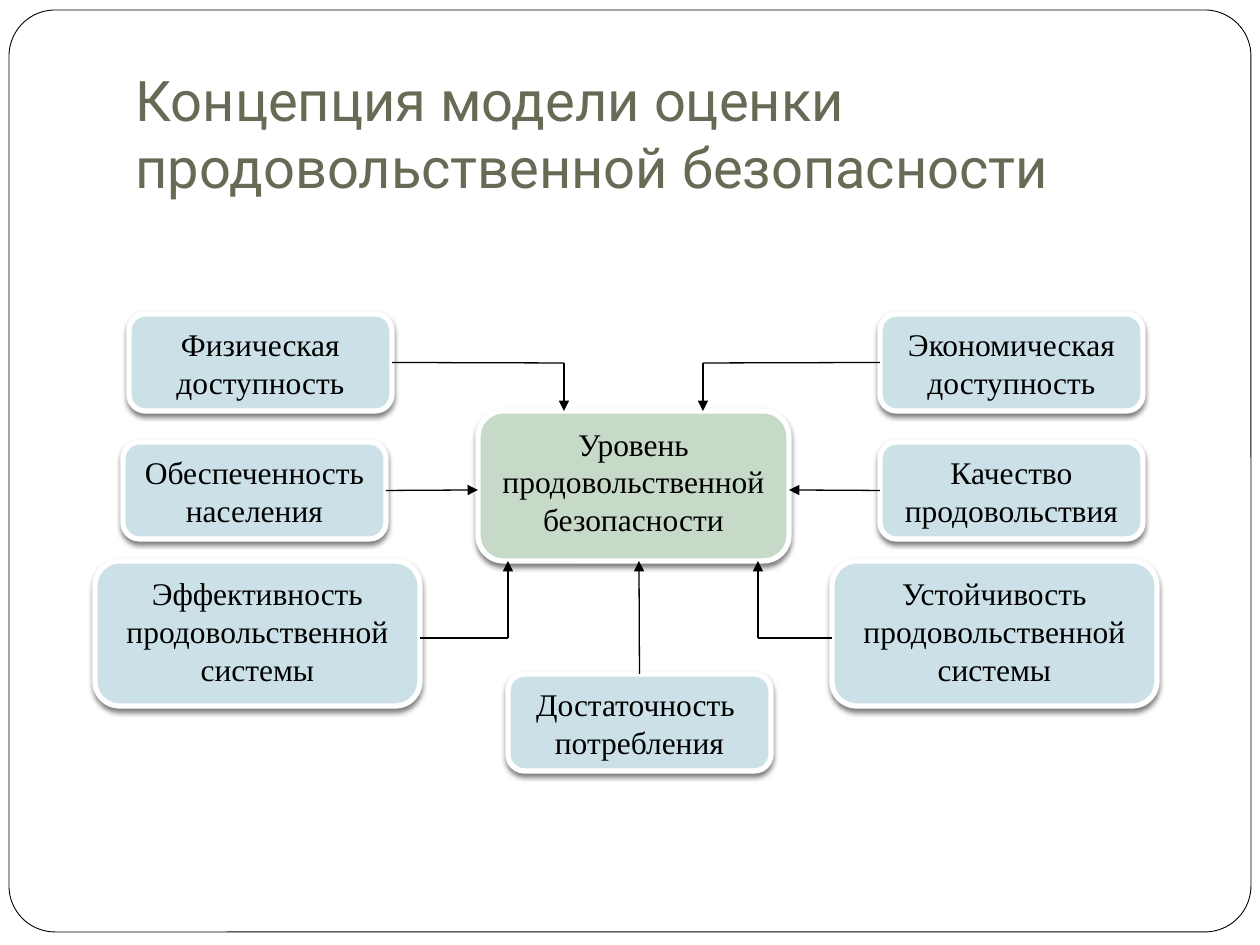
from dataclasses import dataclass
from typing import Optional

from lxml.etree import SubElement
from pptx import Presentation
from pptx.dml.color import RGBColor
from pptx.enum.shapes import MSO_CONNECTOR, MSO_SHAPE
from pptx.enum.text import MSO_ANCHOR, PP_ALIGN
from pptx.oxml.ns import qn
from pptx.util import Emu, Pt

EMU_PER_PX = 914400 / 126
TOP, LEFT, BOTTOM, RIGHT = range(4)
BLACK = "000000"
WHITE = "FFFFFF"
OLIVE = "676A55"
GREEN = "C7DAC8"
BLUE = "CBE1E7"
SMALL = (263, 97)
LARGE = (325, 145)


@dataclass(frozen=True)
class Box:
    text: str
    left: int
    top: int
    size: tuple[int, int]
    fill: str = BLUE


@dataclass(frozen=True)
class Joint:
    box: str
    side: int


@dataclass(frozen=True)
class Link:
    start: tuple[int, int]
    end: tuple[int, int]
    has_arrow: bool = False
    start_joint: Optional[Joint] = None
    end_joint: Optional[Joint] = None


BOXES = {
    "level": Box("Уровень продовольственной безопасности", 478, 411, (311, 150), GREEN),
    "efficiency": Box("Эффективность продовольственной системы", 95, 561, LARGE),
    "stability": Box("Устойчивость продовольственной системы", 832, 561, LARGE),
    "physical": Box("Физическая доступность", 129, 314, SMALL),
    "economic": Box("Экономическая доступность", 880, 314, SMALL),
    "supply": Box("Обеспеченность населения", 123, 442, SMALL),
    "quality": Box("Качество продовольствия", 880, 442, SMALL),
    "sufficiency": Box("Достаточность \vпотребления", 508, 674, SMALL),
}

LINKS = [
    Link((392, 363), (564, 363), start_joint=Joint("physical", RIGHT)),
    Link((564, 363), (564, 411), has_arrow=True),
    Link((703, 363), (880, 363), end_joint=Joint("economic", LEFT)),
    Link((703, 363), (703, 411), has_arrow=True),
    Link((386, 490), (478, 490), True, Joint("supply", RIGHT)),
    Link((880, 490), (789, 490), True, Joint("quality", LEFT)),
    Link((639, 674), (639, 561), True, Joint("sufficiency", TOP)),
    Link((420, 638), (508, 638)),
    Link((508, 638), (508, 561), has_arrow=True),
    Link((758, 638), (832, 638)),
    Link((758, 638), (758, 561), has_arrow=True),
]


def px(length: float) -> Emu:
    return Emu(round(length * EMU_PER_PX))


def color(value: str) -> RGBColor:
    return RGBColor.from_string(value)


def write_text(shape, text: str, *, size: int, font: str, fill: str, align, anchor) -> None:
    frame = shape.text_frame
    frame.word_wrap = True
    frame.vertical_anchor = anchor
    frame.text = text
    paragraph = frame.paragraphs[0]
    paragraph.alignment = align
    for run in paragraph.runs:
        run.font.size = Pt(size)
        run.font.name = font
        run.font.color.rgb = color(fill)


def add_round_rectangle(slide, left: int, top: int, width: int, height: int, *,
                        fill: str, line: str, line_width: float, rounding: float):
    shape = slide.shapes.add_shape(
        MSO_SHAPE.ROUNDED_RECTANGLE, px(left), px(top), px(width), px(height))
    shape.adjustments[0] = rounding
    shape.fill.solid()
    shape.fill.fore_color.rgb = color(fill)
    shape.line.color.rgb = color(line)
    shape.line.width = Pt(line_width)
    shape.shadow.inherit = False
    return shape


def add_shadow(shape) -> None:
    effects = shape.element.spPr.find(qn("a:effectLst"))
    shadow = SubElement(effects, qn("a:outerShdw"), blurRad=str(Pt(3)), dist=str(Pt(2)),
                        dir="5400000", rotWithShape="0")
    shadow_color = SubElement(shadow, qn("a:srgbClr"), val=BLACK)
    SubElement(shadow_color, qn("a:alpha"), val="50000")


def add_box(slide, box: Box):
    shape = add_round_rectangle(slide, box.left, box.top, *box.size, fill=box.fill,
                                line=WHITE, line_width=3, rounding=0.17)
    add_shadow(shape)
    write_text(shape, box.text, size=18, font="Times New Roman", fill=BLACK,
               align=PP_ALIGN.CENTER, anchor=MSO_ANCHOR.TOP)
    return shape


def add_link(slide, link: Link, shapes: dict) -> None:
    connector = slide.shapes.add_connector(
        MSO_CONNECTOR.STRAIGHT, *map(px, link.start + link.end))
    if link.start_joint:
        connector.begin_connect(shapes[link.start_joint.box], link.start_joint.side)
    if link.end_joint:
        connector.end_connect(shapes[link.end_joint.box], link.end_joint.side)
    connector.line.color.rgb = color(BLACK)
    connector.line.width = Pt(0.75)
    properties = connector.element.spPr
    if link.has_arrow:
        SubElement(properties.find(qn("a:ln")), qn("a:tailEnd"), type="triangle")
    SubElement(properties, qn("a:effectLst"))


def add_frame(slide) -> None:
    frame = add_round_rectangle(slide, 9, 10, 1242, 922, fill=WHITE, line=BLACK,
                                line_width=0.5, rounding=0.05)
    slide.shapes.title.element.addprevious(frame.element)


def set_title(slide) -> None:
    title = slide.shapes.title
    title.left, title.top, title.width, title.height = map(px, (123, 55, 1071, 158))
    title.text_frame.margin_bottom = px(13)
    write_text(title, "Концепция модели оценки продовольственной безопасности",
               size=32, font="Roboto", fill=OLIVE,
               align=PP_ALIGN.LEFT, anchor=MSO_ANCHOR.BOTTOM)


def main() -> None:
    presentation = Presentation()
    presentation.slide_width = px(1260)
    presentation.slide_height = px(945)
    slide = presentation.slides.add_slide(presentation.slide_layouts[5])
    add_frame(slide)
    set_title(slide)
    shapes = {name: add_box(slide, box) for name, box in BOXES.items()}
    for link in LINKS:
        add_link(slide, link, shapes)
    presentation.save("out.pptx")


if __name__ == "__main__":
    main()
